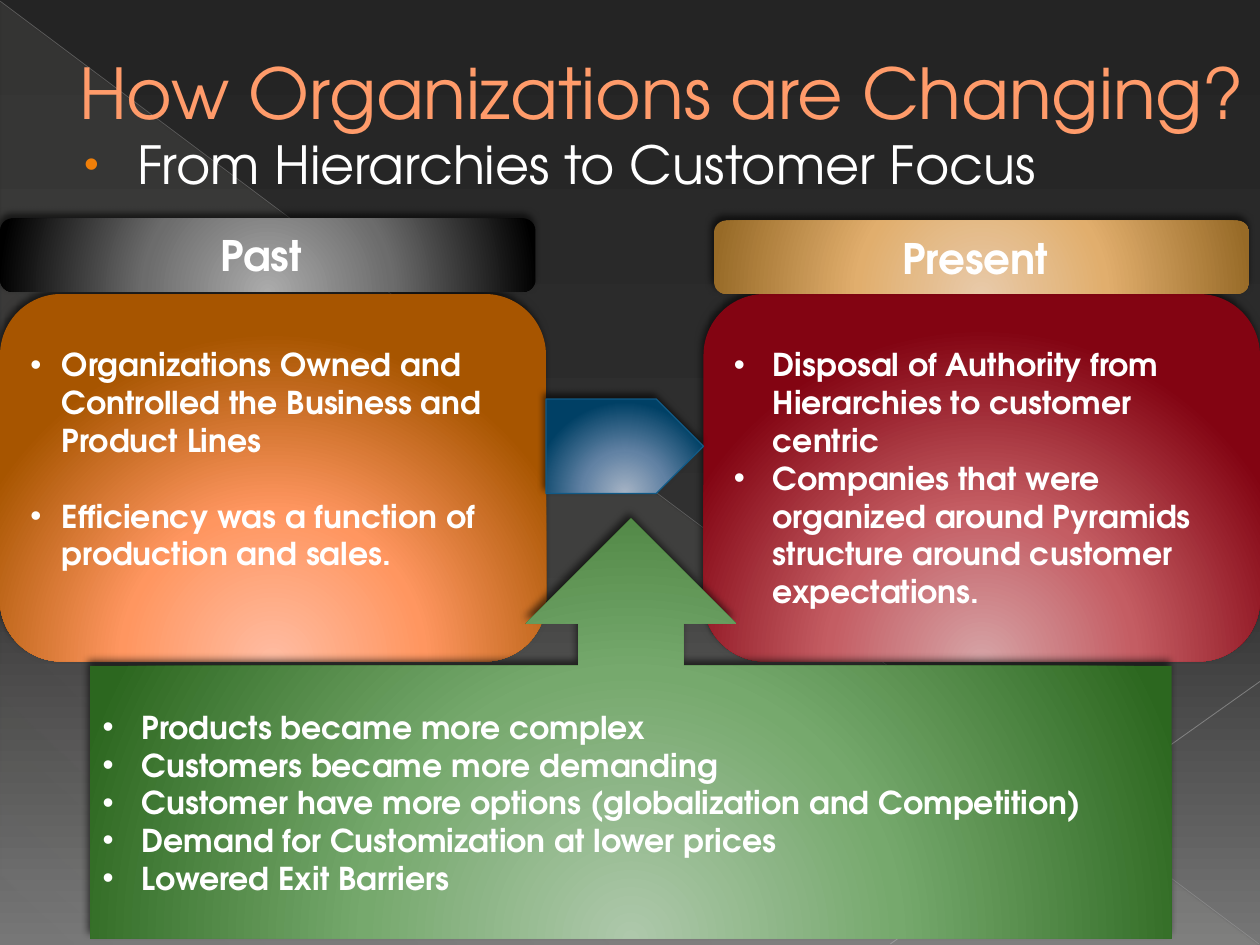
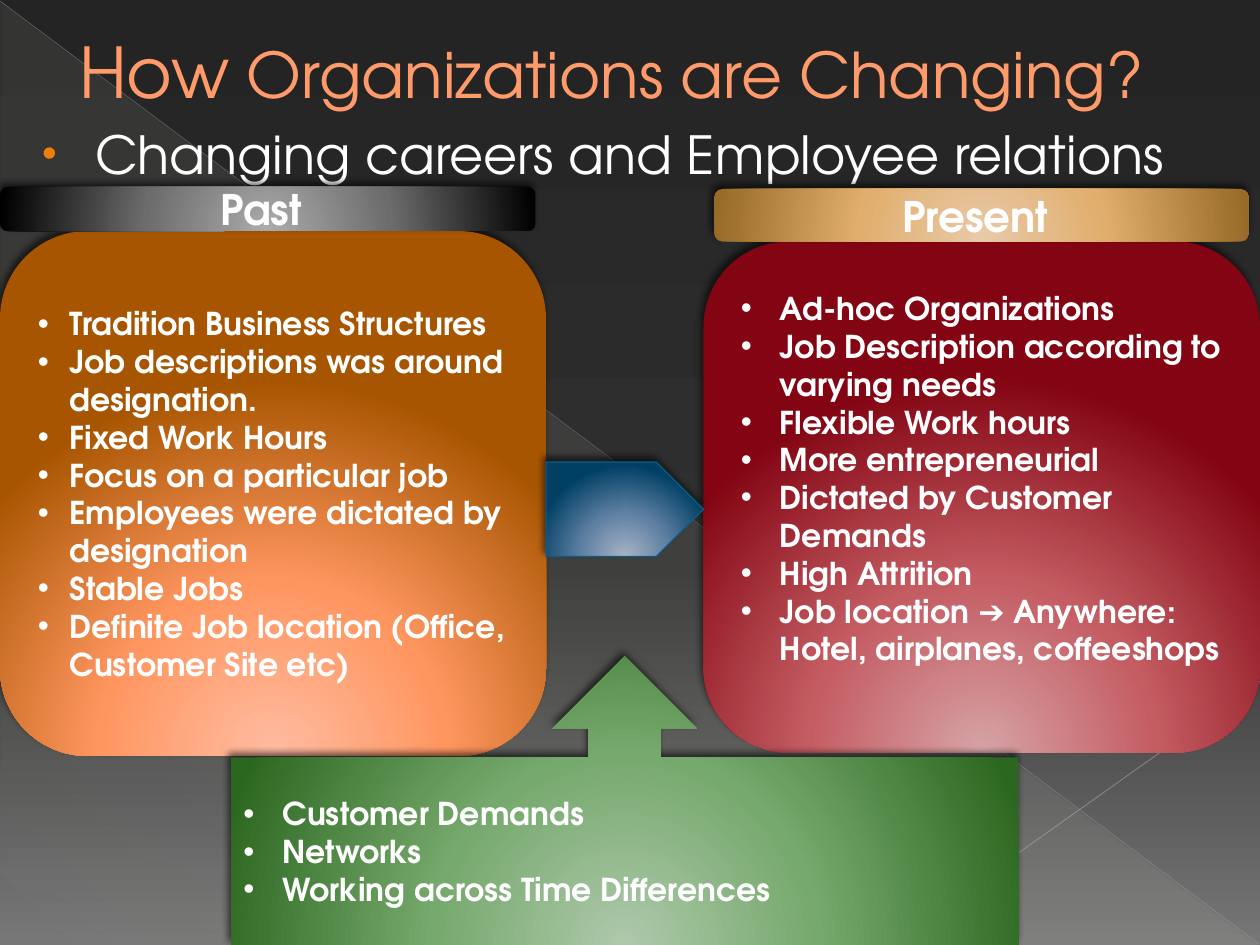
from lxml.etree import SubElement
from pptx import Presentation
from pptx.dml.color import RGBColor
from pptx.enum.shapes import MSO_CONNECTOR, MSO_SHAPE
from pptx.enum.text import MSO_ANCHOR, PP_ALIGN
from pptx.oxml.ns import qn
from pptx.util import Emu, Inches, Pt

FONT = "TeX Gyre Adventor"
COLS, ROWS = 120, 90
LINE = 0.3  # height of one line of body text, in inches
INK = {
    "white": "FFFFFF", "title": "FF9B6A", "edge": "A65806", "dot": "F07F09",
    "rim": "115A86", "shade": "000000", "ray": "B6B6B6", "glint": "BFBFBF",
}
# Each gradient lists (position, colour, opacity) in percent
GLOW = {
    name: list(zip((0, 46, 100), hues, (100,) * 3))
    for name, hues in {
        "red": ("D6A3A6", "C45D63", "830412"),
        "orange": ("FFBCA2", "FF9660", "A75500"),
        "blue": ("A6B4C5", "6282A4", "004065"),
        "green": ("AEC8AB", "76A96D", "2C671F"),
        "black": ("ABABAB", "6C6C6C", "000000"),
        "gold": ("E8CAA9", "E1AE6D", "976A27"),
    }.items()
}
NIGHT = [(0, "242424", 100), (60, "303030", 100), (100, "767676", 100)]
VEIL = [(0, "E3DED1", 10), (70, "E3DED1", 8), (100, "E3DED1", 1)]


def node(home, tag, **attrs):
    return SubElement(home, qn(tag), {k: str(v) for k, v in attrs.items()})


def tint(home, hue, alpha=100):
    """Add an RGB colour, with its opacity in percent, to an XML element."""
    item = node(home, "a:srgbClr", val=hue)
    if alpha < 100:
        node(item, "a:alpha", val=alpha * 1000)


def blend(home, stops, angle=None):
    """Turn a solid fill into a linear gradient, or a round one if no angle."""
    old = home.find(qn("a:solidFill"))
    grad = node(home, "a:gradFill", rotWithShape=1)
    home.replace(old, grad)
    steps = node(grad, "a:gsLst")
    for pos, hue, alpha in stops:
        tint(node(steps, "a:gs", pos=pos * 1000), hue, alpha)
    if angle is None:
        ring = node(grad, "a:path", path="circle")
        node(ring, "a:fillToRect", l=50000, t=155000, r=50000, b=-55000)
    else:
        node(grad, "a:lin", ang=angle * 60000, scaled=0)


def bullet(para, left, hang, hue=None, size=None):
    props = para._p.get_or_add_pPr()
    props.set("marL", str(Inches(left)))
    props.set("indent", str(-Inches(hang)))
    if hue:
        tint(node(props, "a:buClr"), hue)
    if size:
        node(props, "a:buSzPct", val=size * 1000)
    node(props, "a:buFont", typeface="Arial")
    node(props, "a:buChar", char="•")


class Deck:
    def __init__(self):
        self.prs = Presentation()
        self.prs.slide_width, self.prs.slide_height = Inches(10), Inches(7.5)
        self.slide = None

    def grid(self, x, y, *size):
        """Change columns and rows into lengths."""
        units = (self.prs.slide_width / COLS, self.prs.slide_height / ROWS) * 2
        return [Emu(round(n * u)) for n, u in zip((x, y, *size), units)]

    def page(self):
        self.slide = self.prs.slides.add_slide(self.prs.slide_layouts[6])
        self.slide.background.fill.solid()
        blend(self.slide.element.find(".//" + qn("p:bgPr")), NIGHT, 90)
        veil = self.block(MSO_SHAPE.RIGHT_TRIANGLE, (0.1, 0.2, 119.8, 89.8))
        blend(veil._element.spPr, VEIL, 133)
        self.ray((0, 0.1), (119.9, 89.9), "ray", 0.39, 35)
        self.ray((120, 64.9), (84.8, 89.9), "glint", 0.47, 45)

    def ray(self, start, end, hue, width, alpha):
        ends = self.grid(*start) + self.grid(*end)
        line = self.slide.shapes.add_connector(MSO_CONNECTOR.STRAIGHT, *ends)
        line.line.color.rgb = RGBColor.from_string(INK[hue])
        line.line.width = Pt(width)
        props = line._element.spPr
        hue_node = props.find(".//" + qn("a:srgbClr"))
        node(hue_node, "a:alpha", val=alpha * 1000)
        node(props, "a:effectLst")

    def block(self, kind, area):
        shape = self.slide.shapes.add_shape(kind, *self.grid(*area))
        shape.shadow.inherit = False
        shape.fill.solid()
        shape.line.fill.background()
        return shape

    def glow(self, kind, area, hue):
        """Add a preset shape with a round gradient and a soft shadow."""
        shape = self.block(kind, area)
        props = shape._element.spPr
        blend(props, GLOW[hue])
        cast = node(props.find(qn("a:effectLst")), "a:outerShdw", blurRad=Pt(4),
                    dist=Pt(3), dir=245 * 60000, algn="tl", rotWithShape=0)
        tint(cast, INK["shade"], 60)
        return shape

    def style(self, run, size, hue="white", bold=False):
        font = run.font
        font.name, font.size, font.bold = FONT, Pt(size), bold
        font.color.rgb = RGBColor.from_string(INK[hue])

    def frame(self, area, anchor):
        frame = self.slide.shapes.add_textbox(*self.grid(*area)).text_frame
        frame.word_wrap = True
        frame.vertical_anchor = anchor
        return frame

    def title(self, area, parts):
        para = self.frame(area, MSO_ANCHOR.MIDDLE).paragraphs[0]
        para._p.get_or_add_pPr().set("marL", str(Inches(0.53)))
        for text, size in parts:
            run = para.add_run()
            run.text = text
            self.style(run, size, "title")
            edge = node(run._r.rPr, "a:ln", w=Pt(0.5))
            tint(node(edge, "a:solidFill"), INK["edge"])
            run._r.rPr.insert(0, edge)

    def lead(self, area, text):
        frame = self.frame(area, MSO_ANCHOR.TOP)
        frame.text = text
        para = frame.paragraphs[0]
        bullet(para, 0.49, 0.42, INK["dot"], 80)
        self.style(para.runs[0], 30)

    def band(self, area, hue, text):
        frame = self.glow(MSO_SHAPE.ROUNDED_RECTANGLE, area, hue).text_frame
        frame.text = text
        frame.margin_right = Inches(0.2)
        frame.vertical_anchor = MSO_ANCHOR.MIDDLE
        para = frame.paragraphs[0]
        para.alignment = PP_ALIGN.CENTER
        self.style(para.runs[0], 24, bold=True)

    def panel(self, kind, area, hue, items, hang=0.31, gap=0, lift=0):
        """Add a bulleted shape; gap and lift count lines of text."""
        frame = self.glow(kind, area, hue).text_frame
        frame.text = "\n".join(items)
        frame.word_wrap = True
        frame.vertical_anchor = MSO_ANCHOR.MIDDLE
        frame.margin_bottom = Inches(0.05 + lift * LINE)
        for para in frame.paragraphs:
            para.alignment = PP_ALIGN.LEFT
            if gap and para._p is not frame.paragraphs[-1]._p:
                para.space_after = Inches(gap * LINE)
            bullet(para, hang, hang)
            self.style(para.runs[0], 18, bold=True)

    def past(self, top, high, items, **more):
        self.panel(MSO_SHAPE.ROUNDED_RECTANGLE, (0, top, 52, high), "orange",
                   items, hang=0.25, **more)

    def present(self, top, high, items, **more):
        self.panel(MSO_SHAPE.ROUNDED_RECTANGLE, (67, top, 53, high), "red",
                   items, **more)

    def arrow(self, top):
        shape = self.glow(MSO_SHAPE.PENTAGON, (52, top, 15, 9), "blue")
        shape.line.color.rgb = RGBColor.from_string(INK["rim"])
        shape.line.width = Pt(0.75)

    def cause(self, area, items):
        self.panel(MSO_SHAPE.UP_ARROW_CALLOUT, area, "green", items)

    def bands(self, past, present):
        """Add both headings, each given as (top, height)."""
        self.band((0, past[0], 51, past[1]), "black", "Past")
        self.band((68, present[0], 51, present[1]), "gold", "Present")


def focus(deck):
    deck.page()
    deck.title((0, 3.5, 124, 10.4), [("How Organizations are Changing?", 40)])
    deck.lead((6, 12, 108, 72.7), "From Hierarchies to Customer Focus")
    deck.present(28, 35, [
        "Disposal of Authority from Hierarchies to customer centric",
        "Companies that were organized around Pyramids structure around "
        "customer expectations.",
    ])
    deck.past(28, 35, [
        "Organizations Owned and Controlled the Business and Product Lines",
        "Efficiency was a function of production and sales.",
    ], gap=1, lift=1)
    deck.arrow(38)
    deck.cause((8.6, 49.4, 103, 40), [
        "Products became more complex",
        "Customers became more demanding",
        "Customer have more options (globalization and Competition)",
        "Demand for Customization at lower prices",
        "Lowered Exit Barriers",
    ])
    deck.bands((20.8, 7), (21, 7))


def careers(deck):
    deck.page()
    deck.title((0, 0, 120, 13.4),
               [("How", 40), (" Organizations are Changing?", 36)])
    deck.lead((2, 11, 118, 60), "Changing careers and Employee relations")
    deck.present(23, 48.7, [
        "Ad-hoc Organizations",
        "Job Description according to varying needs",
        "Flexible Work hours",
        "More entrepreneurial",
        "Dictated by Customer Demands",
        "High Attrition",
        "Job location ➔ Anywhere: Hotel, airplanes, coffeeshops",
    ], lift=1)
    deck.past(22, 50, [
        "Tradition Business Structures",
        "Job descriptions was around designation.",
        "Fixed Work Hours",
        "Focus on a particular job",
        "Employees were dictated by designation",
        "Stable Jobs",
        "Definite Job location (Office, Customer Site etc)",
    ])
    deck.arrow(44)
    deck.cause((22, 62.5, 75, 27.5), [
        "Customer Demands",
        "Networks",
        "Working across Time Differences",
    ])
    deck.bands((17.8, 4.2), (18, 5))


def main():
    deck = Deck()
    focus(deck)
    careers(deck)
    deck.prs.save("out.pptx")


if __name__ == "__main__":
    main()
